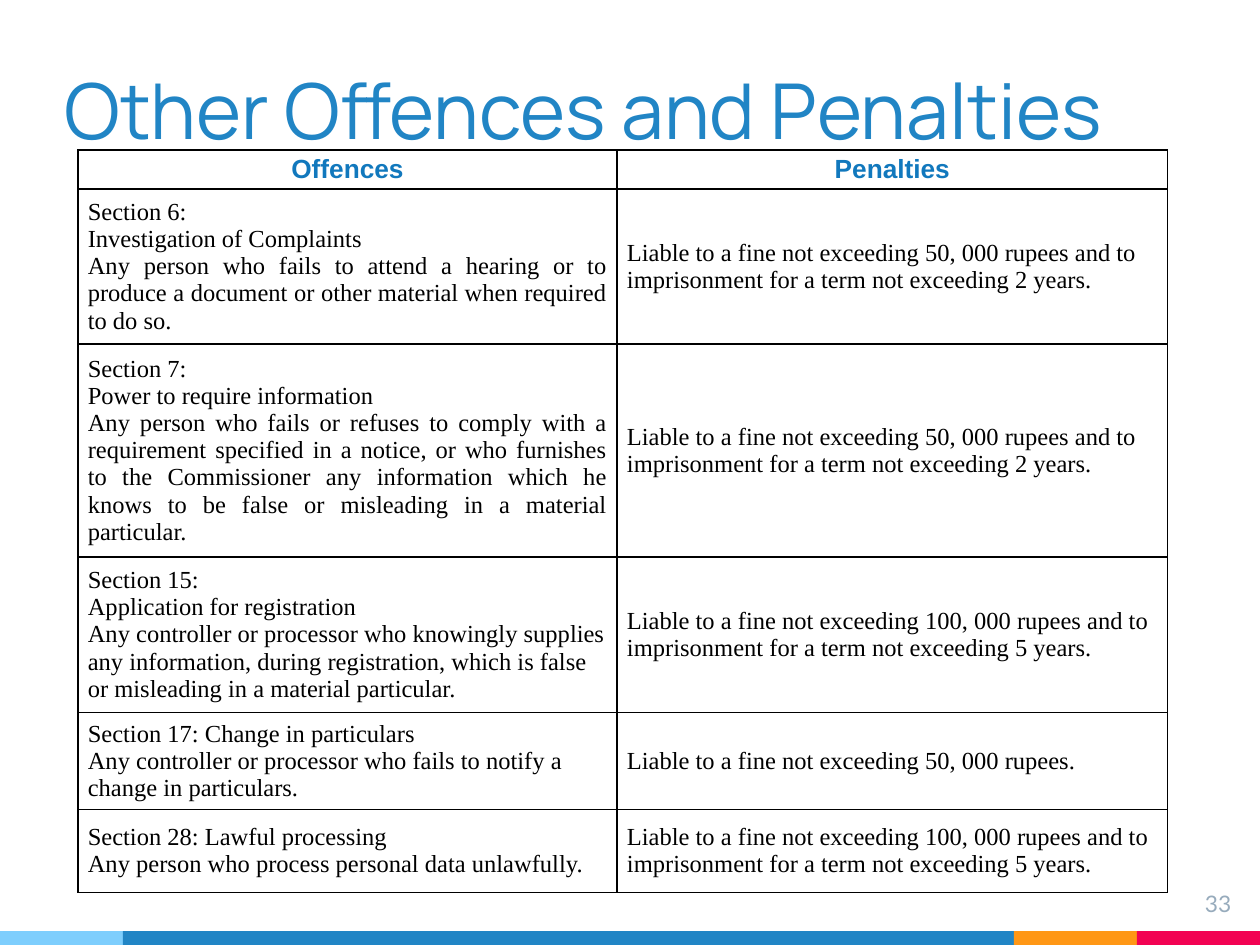
import pptx
import pptx.dml.color
import pptx.enum.shapes
import pptx.enum.text
import pptx.oxml
import pptx.util
from pptx.util import Cm

ALIGN = pptx.enum.text.PP_ALIGN
ANCHOR = pptx.enum.text.MSO_ANCHOR
DRAWING = "http://schemas.openxmlformats.org/drawingml/2006/main"


def color(value):
    return pptx.dml.color.RGBColor.from_string(value)


class SlideBuilder:
    """Hold the style and the current slide, and add its elements."""

    blue = "2185C5"
    header_blue = "1178BD"
    gray = "97ABBC"
    black = "000000"
    inset = Cm(0.25)

    def __init__(self, presentation):
        self.slide = presentation.slides.add_slide(presentation.slide_layouts[5])

    def format_paragraph(self, paragraph, text, font, size, fill, align, bold=False):
        paragraph.text = text
        paragraph.alignment = align
        paragraph.font.name = font
        paragraph.font.size = pptx.util.Pt(size)
        paragraph.font.color.rgb = color(fill)
        paragraph.font.bold = bold

    def format_frame(self, frame, anchor):
        frame.word_wrap = True
        frame.auto_size = pptx.enum.text.MSO_AUTO_SIZE.NONE
        frame.vertical_anchor = anchor
        frame.margin_left = frame.margin_right = self.inset
        frame.margin_top = frame.margin_bottom = self.inset

    def title(self, text, left, top, width, height):
        shape = self.slide.shapes.title
        shape.left, shape.top = Cm(left), Cm(top)
        shape.width, shape.height = Cm(width), Cm(height)
        self.format_frame(shape.text_frame, ANCHOR.BOTTOM)
        shape.text_frame.margin_left = Cm(0.36)
        self.format_paragraph(shape.text_frame.paragraphs[0], text,
                              "Manrope", 44, self.blue, ALIGN.JUSTIFY)

    def page_number(self, text, left, top, width, height):
        shape = self.slide.shapes.add_textbox(Cm(left), Cm(top), Cm(width), Cm(height))
        self.format_frame(shape.text_frame, ANCHOR.TOP)
        self.format_paragraph(shape.text_frame.paragraphs[0], text,
                              "Lato", 13, self.gray, ALIGN.RIGHT)

    def stripe(self, bands, top, height):
        left = 0
        for width, fill in bands:
            shape = self.slide.shapes.add_shape(
                pptx.enum.shapes.MSO_SHAPE.RECTANGLE,
                Cm(left), Cm(top), Cm(width), Cm(height))
            shape.shadow.inherit = False
            shape.fill.solid()
            shape.fill.fore_color.rgb = color(fill)
            shape.line.fill.background()
            left += width

    def border(self, cell):
        properties = cell._tc.get_or_add_tcPr()
        for position, side in enumerate(("lnL", "lnR", "lnT", "lnB")):
            properties.insert(position, pptx.oxml.parse_xml(
                f'<a:{side} xmlns:a="{DRAWING}" w="12700"><a:solidFill>'
                f'<a:srgbClr val="{self.black}"/></a:solidFill></a:{side}>'))

    def cell(self, cell, lines, align, header):
        cell.fill.background()
        self.border(cell)
        cell.margin_left = cell.margin_right = Cm(0.2)
        cell.margin_top = cell.margin_bottom = Cm(0.1)
        cell.vertical_anchor = ANCHOR.TOP if header else ANCHOR.MIDDLE
        frame = cell.text_frame
        font, size, fill = (("Arial", 15, self.header_blue) if header
                            else ("Times New Roman", 14, self.black))
        for index, line in enumerate(lines):
            paragraph = frame.add_paragraph() if index else frame.paragraphs[0]
            self.format_paragraph(paragraph, line, font, size, fill, align, header)

    def table(self, rows, left, top, widths, heights):
        table = self.slide.shapes.add_table(
            len(rows), len(widths), Cm(left), Cm(top),
            Cm(sum(widths)), Cm(sum(heights))).table
        table.first_row = table.horz_banding = False
        for column, width in zip(table.columns, widths):
            column.width = Cm(width)
        for row, height in zip(table.rows, heights):
            row.height = Cm(height)
        for row_index, (offence_align, *contents) in enumerate(rows):
            header = row_index == 0
            aligns = (offence_align, ALIGN.CENTER if header else ALIGN.LEFT)
            for column_index, (lines, align) in enumerate(zip(contents, aligns)):
                self.cell(table.cell(row_index, column_index), lines, align, header)


def penalty(amount, years):
    return [f"Liable to a fine not exceeding {amount} rupees and to "
            f"imprisonment for a term not exceeding {years} years."]


def main():
    presentation = pptx.Presentation()
    presentation.slide_width, presentation.slide_height = Cm(25.4), Cm(19.05)
    builder = SlideBuilder(presentation)
    builder.stripe([(2.48, "7ECEFD"), (17.96, builder.blue),
                    (2.48, "FF9715"), (2.48, "F20253")], 18.77, 0.28)
    builder.title("Other Offences and Penalties", 0.94, 0.84, 22.3, 2.54)
    builder.page_number("33", 23.55, 17.68, 1.52, 1.17)
    rows = [
        (ALIGN.CENTER, ["Offences"], ["Penalties"]),
        (ALIGN.JUSTIFY,
         ["Section 6:", "Investigation of Complaints",
          "Any person who fails to attend a hearing or to produce a document "
          "or other material when required to do so."],
         penalty("50, 000", 2)),
        (ALIGN.JUSTIFY,
         ["Section 7:", "Power to require information",
          "Any person who fails or refuses to comply with a requirement "
          "specified in a notice, or who furnishes to the Commissioner any "
          "information which he knows to be false or misleading in a material "
          "particular."],
         penalty("50, 000", 2)),
        (ALIGN.LEFT,
         ["Section 15:", "Application for registration",
          "Any controller or processor who knowingly supplies any information, "
          "during registration, which is false or misleading in a material "
          "particular."],
         penalty("100, 000", 5)),
        (ALIGN.LEFT,
         ["Section 17: Change in particulars",
          "Any controller or processor who fails to notify a change in "
          "particulars."],
         ["Liable to a fine not exceeding 50, 000 rupees."]),
        (ALIGN.LEFT,
         ["Section 28: Lawful processing",
          "Any person who process personal data unlawfully."],
         penalty("100, 000", 5)),
    ]
    builder.table(rows, 1.57, 3.02, [10.87, 11.1],
                  [0.66, 3.13, 4.29, 3.13, 1.96, 1.67])
    presentation.save("out.pptx")


if __name__ == "__main__":
    main()
